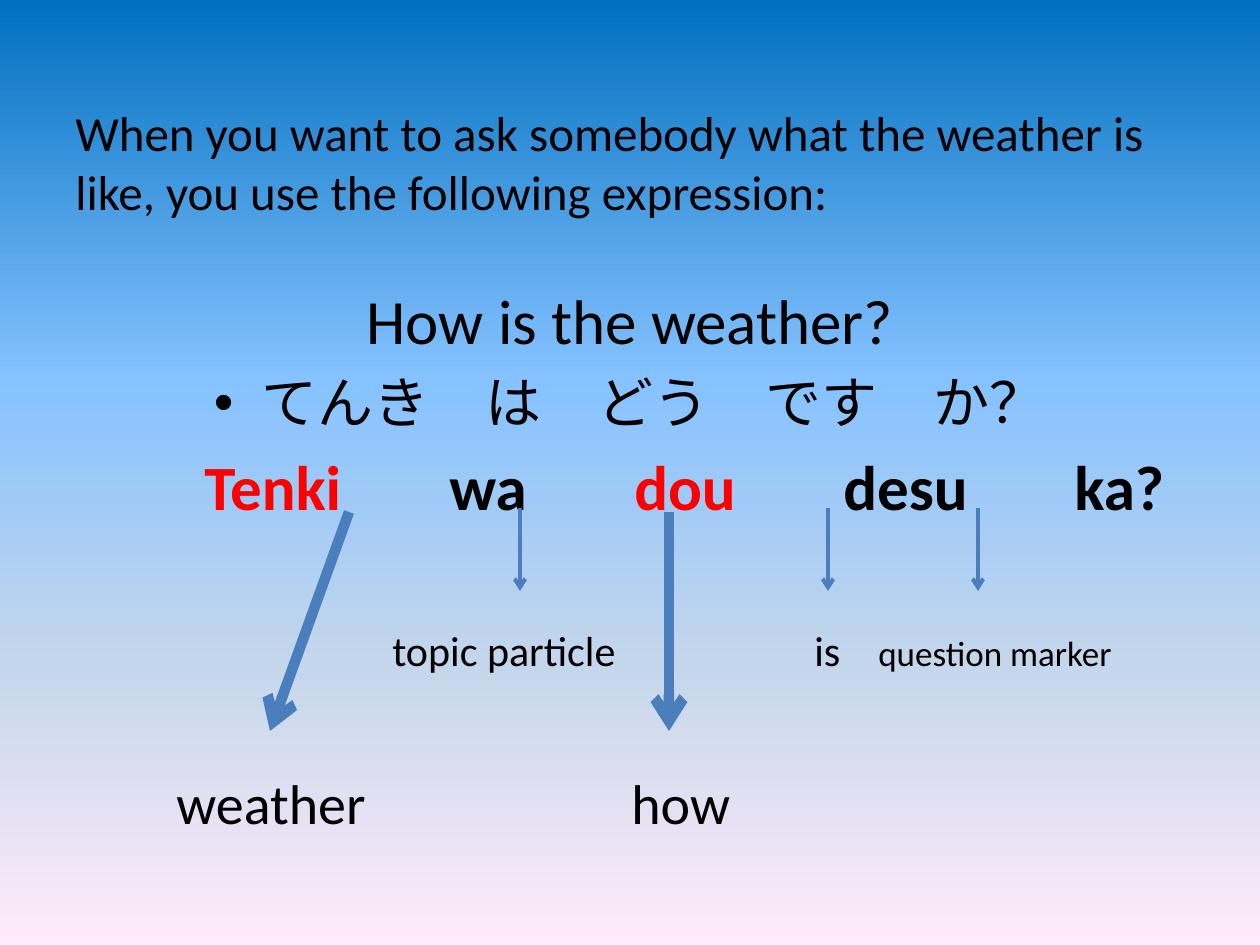
"""Build a slide that explains how to ask about the weather in Japanese."""
import dataclasses
import typing

import pptx
import pptx.dml.color
import pptx.enum.shapes
import pptx.enum.text
import pptx.oxml.ns
import pptx.oxml.xmlchemy
import pptx.slide
import pptx.util
import lxml.etree

SCALE = 914400 / 126
QN = pptx.oxml.ns.qn
ALIGN = pptx.enum.text.PP_ALIGN
ANCHOR = pptx.enum.text.MSO_ANCHOR


@dataclasses.dataclass(frozen=True)
class Theme:
    font: str = "Calibri"
    ink: str = "000000"
    key: str = "FF0000"
    line: str = "4B7EBC"
    sky: tuple = ((0, "0070C0"), (40, "85C2FF"), (70, "C4D6EB"), (100, "FFEBFA"))
    lead: int = 28
    head: int = 36
    kana: int = 32
    label: int = 24
    small: int = 20
    thick: float = 6
    thin: float = 2.25


THEME = Theme()


class Run(typing.NamedTuple):
    text: str
    size: int
    color: str = THEME.ink
    bold: bool = False


class Para(typing.NamedTuple):
    runs: list
    align: typing.Any = ALIGN.LEFT
    gap: int = 0
    bullet: str = ""
    tabs: tuple = ()


class Box(typing.NamedTuple):
    left: int
    top: int
    width: int
    height: int
    anchor: typing.Any
    paras: list


class Arrow(typing.NamedTuple):
    start: tuple
    end: tuple
    width: float


def emu(px: int) -> int:
    """Turn px into EMU."""
    return round(px * SCALE)


def rgb(code: str) -> pptx.dml.color.RGBColor:
    """Turn a hex code into a colour."""
    return pptx.dml.color.RGBColor.from_string(code)


def apply(item: typing.Any, form: dict) -> None:
    """Set each format value on an item."""
    for name, value in form.items():
        setattr(item, name, value)


def add(node: typing.Any, tag: str, **attrs: str) -> typing.Any:
    """Add an XML child with attributes."""
    return lxml.etree.SubElement(node, QN(tag), attrs)


def paint(slide: pptx.slide.Slide) -> None:
    """Fill the background with the sky gradient."""
    fill = slide.background.fill
    fill.gradient()
    fill.gradient_angle = 270
    stops = next(slide.element.iter(QN("a:gsLst")))
    for stop in list(stops):
        stops.remove(stop)
    for place, code in THEME.sky:
        add(add(stops, "a:gs", pos=str(place * 1000)), "a:srgbClr", val=code)


def write(para: typing.Any, data: Para, first: bool) -> None:
    """Write one paragraph with its spacing, bullet and tabs."""
    props = para._p.get_or_add_pPr()
    if not first and not data.gap:
        add(add(props, "a:spcBef"), "a:spcPct", val="20000")
    if data.bullet:
        apply_indent = {"marL": "342900", "indent": "-342900"}
        props.attrib.update(apply_indent)
        add(props, "a:buFont", typeface="Arial")
        add(props, "a:buChar", char=data.bullet)
    if data.tabs:
        stops = add(props, "a:tabLst")
        for tab in data.tabs:
            add(stops, "a:tab", pos=str(emu(tab)), algn="l")
    para.alignment = data.align
    if data.gap:
        para.space_before = pptx.util.Pt(data.gap)
    for part in data.runs:
        run = para.add_run()
        run.text = part.text
        apply(run.font, {"name": THEME.font, "size": pptx.util.Pt(part.size), "bold": part.bold})
        run.font.color.rgb = rgb(part.color)


def place(slide: pptx.slide.Slide, box: Box) -> None:
    """Place a text box and its paragraphs."""
    shape = slide.shapes.add_textbox(*map(emu, box[:4]))
    frame = shape.text_frame
    apply(frame, {"word_wrap": True, "vertical_anchor": box.anchor})
    for num, data in enumerate(box.paras):
        para = frame.add_paragraph() if num else frame.paragraphs[0]
        write(para, data, num == 0)


def point(slide: pptx.slide.Slide, arrow: Arrow) -> None:
    """Draw an arrow from a word to its meaning."""
    kind = pptx.enum.shapes.MSO_CONNECTOR.STRAIGHT
    link = slide.shapes.add_connector(kind, *map(emu, arrow.start + arrow.end))
    link.line.width = pptx.util.Pt(arrow.width)
    link.line.color.rgb = rgb(THEME.line)
    add(link.line._get_or_add_ln(), "a:tailEnd", type="arrow")
    add(link._element.spPr, "a:effectLst")


def main() -> None:
    """Build and save the slide."""
    deck = pptx.Presentation()
    apply(deck, {"slide_width": emu(1260), "slide_height": emu(945)})
    slide = deck.slides.add_slide(deck.slide_layouts[6])
    paint(slide)

    lead = "When you want to ask somebody what the weather is like, you use the following expression:"
    words = [("Tenki", THEME.key), ("wa", THEME.ink), ("dou", THEME.key),
             ("desu", THEME.ink), ("ka?", THEME.ink)]
    phrase = [Run("\t" + word, THEME.head, color, True) for word, color in words]
    labels = [Run("\ttopic particle\tis\t", THEME.label), Run("question marker", THEME.small)]
    body = [
        Para([Run("How is the weather?", THEME.head)], ALIGN.CENTER),
        Para([Run("てんき　は　どう　です　か？", THEME.kana)], ALIGN.CENTER, bullet="•"),
        Para(phrase, tabs=(129, 374, 559, 768, 999)),
        Para(labels, gap=58, tabs=(317, 739, 803)),
        Para([Run("\tweather\thow", THEME.kana)], gap=53, tabs=(101, 556)),
    ]
    place(slide, Box(63, 38, 1134, 246, ANCHOR.MIDDLE, [Para([Run(lead, THEME.lead)])]))
    place(slide, Box(63, 275, 1134, 570, ANCHOR.TOP, body))

    thick = [Arrow((left, 512), (right, 731), THEME.thick) for left, right in ((349, 270), (669, 669))]
    thin = [Arrow((left, 508), (left, 591), THEME.thin) for left in (520, 828, 978)]
    for arrow in thick + thin:
        point(slide, arrow)
    deck.save("out.pptx")


if __name__ == "__main__":
    main()
